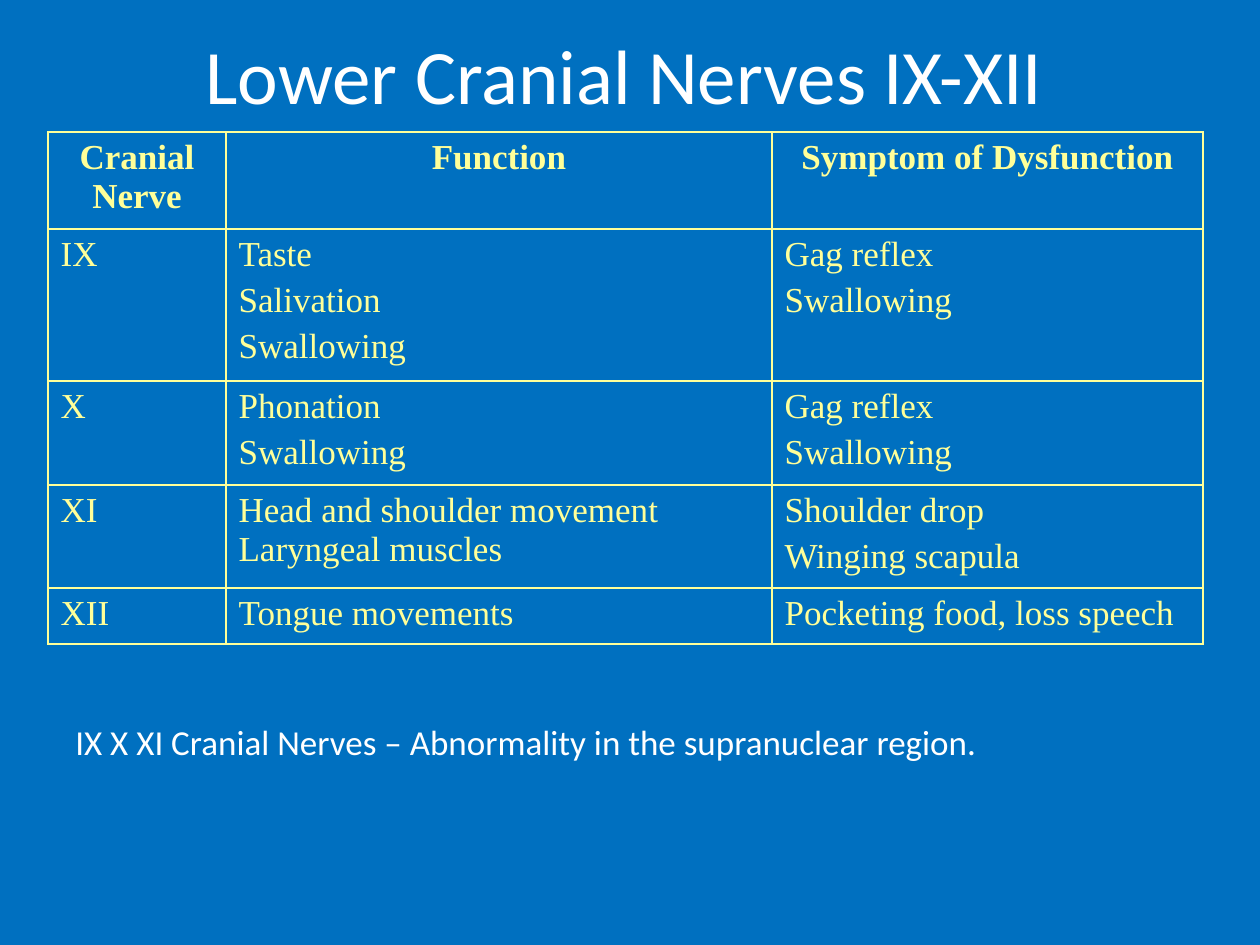
import pptx
import pptx.dml.color
import pptx.enum.text
import pptx.oxml
import pptx.oxml.ns
import pptx.util
from dataclasses import dataclass

EMU_PER_PX = 914400 / 126


def px(n):
    return pptx.util.Emu(round(n * EMU_PER_PX))


@dataclass(frozen=True)
class Theme:
    background: str = "0070C0"
    text: str = "FFFFFF"
    table: str = "FFFF99"
    title_size: int = 44
    body_size: int = 20
    font: str = "Calibri"
    table_font: str = "Times New Roman"
    row_gap: int = 4
    border_width: int = 1


class Deck:
    def __init__(self, prs, theme):
        self.theme = theme
        self.s = prs.slides.add_slide(prs.slide_layouts[6])
        fill = self.s.background.fill
        fill.solid()
        fill.fore_color.rgb = pptx.dml.color.RGBColor.from_string(theme.background)

    def run(self, p, text, size, font, color, bold=False):
        r = p.add_run()
        r.text = text
        r.font.size = pptx.util.Pt(size)
        r.font.name = font
        r.font.bold = bold
        r.font.color.rgb = pptx.dml.color.RGBColor.from_string(color)

    def text(self, box, text, size, align=None):
        sp = self.s.shapes.add_textbox(*map(px, box))
        tf = sp.text_frame
        tf.word_wrap = True
        tf.auto_size = pptx.enum.text.MSO_AUTO_SIZE.SHAPE_TO_FIT_TEXT
        p = tf.paragraphs[0]
        p.alignment = align
        self.run(p, text, size, self.theme.font, self.theme.text)

    def borders(self, cell):
        tc_pr = cell._tc.get_or_add_tcPr()
        width = pptx.util.Pt(self.theme.border_width)
        for i, side in enumerate(("lnL", "lnR", "lnT", "lnB")):
            tc_pr.insert(i, pptx.oxml.parse_xml(
                f'<a:{side} {pptx.oxml.ns.nsdecls("a")} w="{width}"><a:solidFill>'
                f'<a:srgbClr val="{self.theme.table}"/></a:solidFill></a:{side}>'))

    def cell(self, cell, lines, header):
        cell.fill.background()
        self.borders(cell)
        tf = cell.text_frame
        for i, line in enumerate(lines):
            p = tf.add_paragraph() if i else tf.paragraphs[0]
            if i:
                p.space_before = pptx.util.Pt(self.theme.row_gap)
            if header:
                p.alignment = pptx.enum.text.PP_ALIGN.CENTER
            self.run(p, line, self.theme.body_size, self.theme.table_font,
                     self.theme.table, bold=header)

    def table(self, left, top, widths, heights, rows):
        table = self.s.shapes.add_table(
            len(rows), len(widths), px(left), px(top),
            px(sum(widths)), px(sum(heights))).table
        for col, width in zip(table.columns, widths):
            col.width = px(width)
        for row, height in zip(table.rows, heights):
            row.height = px(height)
        for y, row in enumerate(rows):
            for x, lines in enumerate(row):
                self.cell(table.cell(y, x), lines, header=y == 0)


NERVES = [
    (["Cranial Nerve"], ["Function"], ["Symptom of Dysfunction"]),
    (["IX"], ["Taste", "Salivation", "Swallowing"], ["Gag reflex", "Swallowing"]),
    (["X"], ["Phonation", "Swallowing"], ["Gag reflex", "Swallowing"]),
    (["XI"], ["Head and shoulder movement Laryngeal muscles"],
     ["Shoulder drop", "Winging scapula"]),
    (["XII"], ["Tongue movements"], ["Pocketing food, loss speech"]),
]


def main():
    prs = pptx.Presentation()
    prs.slide_width, prs.slide_height = px(1260), px(945)
    theme = Theme()
    deck = Deck(prs, theme)

    # Nerve table
    deck.table(48, 132, [178, 546, 431], [97, 152, 104, 103, 56], NERVES)

    # Title
    deck.text((147, 21, 955, 106), "Lower Cranial Nerves IX-XII",
              theme.title_size, pptx.enum.text.PP_ALIGN.CENTER)

    # Closing note
    deck.text((63, 714, 966, 55),
              "IX X XI Cranial Nerves – Abnormality in the supranuclear region.",
              theme.body_size)

    prs.save("out.pptx")


if __name__ == "__main__":
    main()
